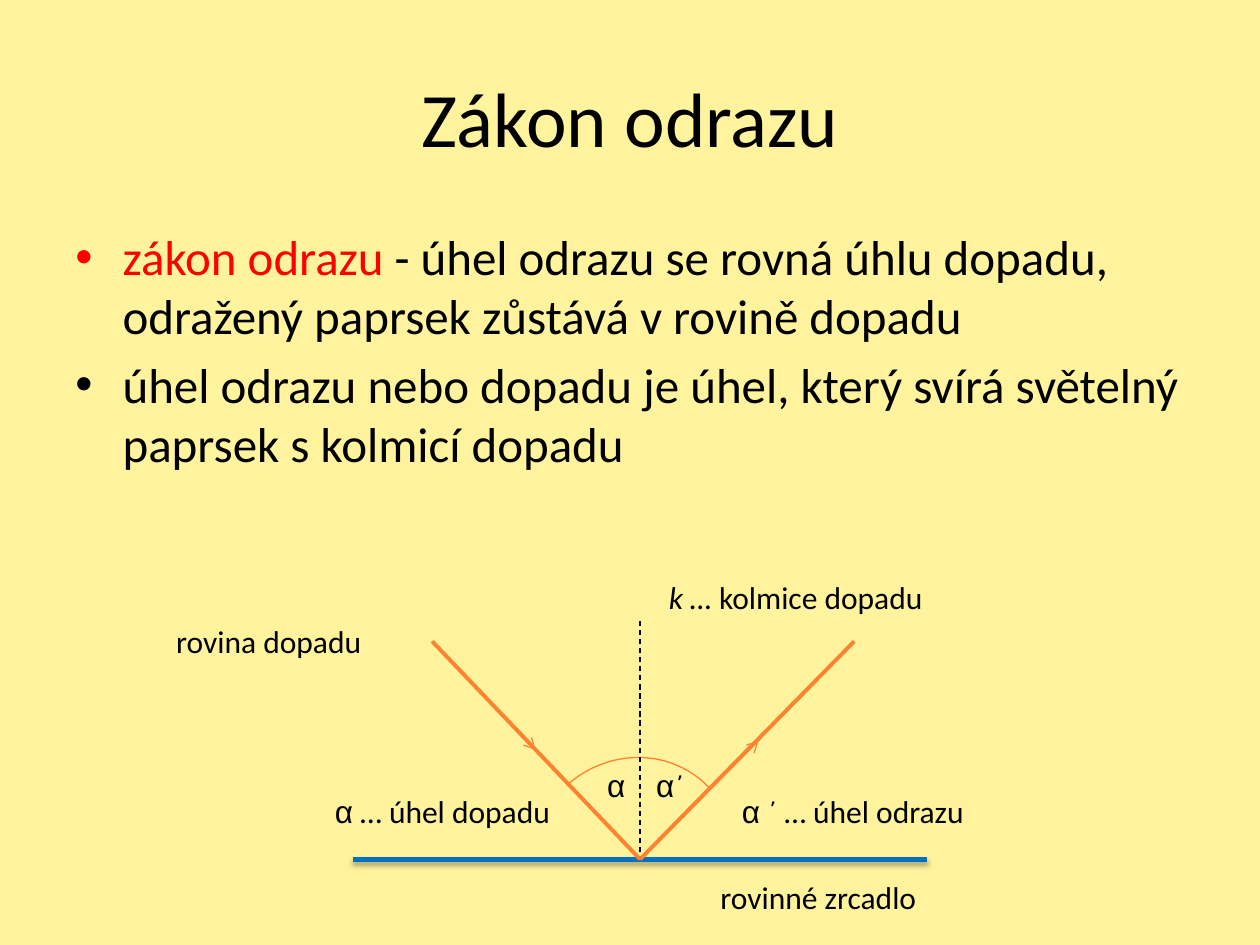
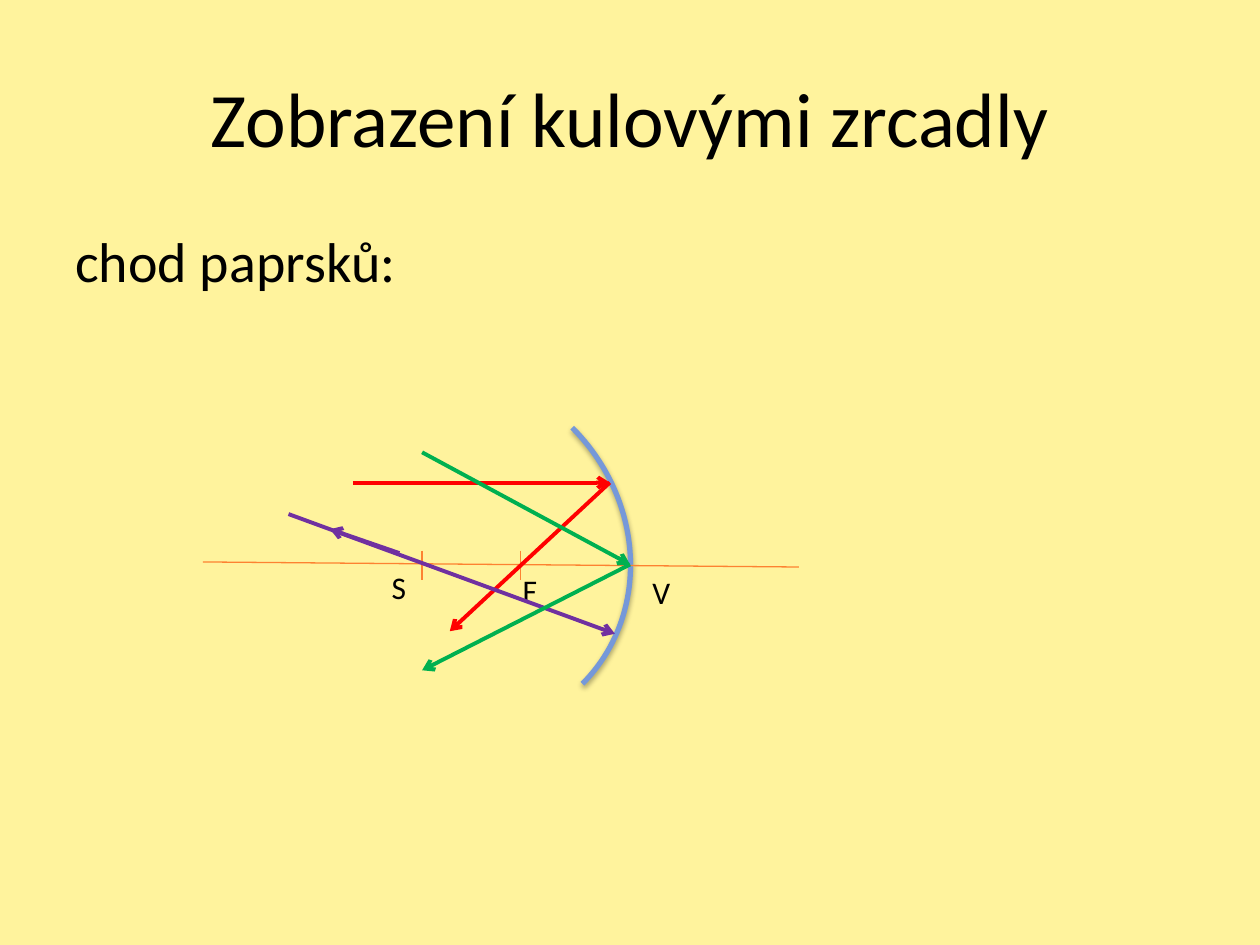
import dataclasses

import lxml.etree
import pptx
import pptx.dml.color
import pptx.enum.dml
import pptx.enum.shapes
import pptx.enum.text
import pptx.oxml.ns
import pptx.util


@dataclasses.dataclass(frozen=True)
class Theme:
    paper: str = "FFF39D"
    ink: str = "000000"
    orange: str = "FD8231"
    blue: str = "0070C0"
    pale_blue: str = "7598D9"
    red: str = "FF0000"
    violet: str = "7030A0"
    green: str = "00B050"
    font: str = "Calibri"
    greek_font: str = "Arial"
    title_size: int = 44
    lead_size: int = 32
    body_size: int = 28
    label_size: int = 18
    thin: float = 0.75
    ray: float = 2.25
    mirror: float = 3


theme = Theme()
qn = pptx.oxml.ns.qn
Pt = pptx.util.Pt
rgb = pptx.dml.color.RGBColor.from_string
STRAIGHT = pptx.enum.shapes.MSO_CONNECTOR.STRAIGHT
ARC = pptx.enum.shapes.MSO_SHAPE.ARC

deck = pptx.Presentation()
deck.slide_width = pptx.util.Inches(10)
deck.slide_height = pptx.util.Inches(7.5)
COLUMN = deck.slide_width / 100
ROW = deck.slide_height / 75

TITLE_AREA = (5, 3, 90, 12.5)
BODY_AREA = (5, 17.5, 90, 49.5)
LABEL_HEIGHT = 4


def on_grid(*cells):
    """Turn alternating columns and rows into slide lengths."""
    return [round(cell * (ROW if index % 2 else COLUMN)) for index, cell in enumerate(cells)]


def stroke(shape, color, width, arrow=False, dashed=False, shadow=False):
    shape.line.color.rgb = rgb(color)
    shape.line.width = Pt(width)
    if dashed:
        shape.line.dash_style = pptx.enum.dml.MSO_LINE.DASH
    properties = shape._element.spPr
    if arrow:
        lxml.etree.SubElement(properties.find(qn("a:ln")), qn("a:tailEnd"), type="arrow")
    effects = lxml.etree.SubElement(properties, qn("a:effectLst"))
    if shadow:
        outer = lxml.etree.SubElement(
            effects, qn("a:outerShdw"), blurRad=str(Pt(3.1)), dist=str(Pt(1.8)),
            dir="5400000", rotWithShape="0")
        tint = lxml.etree.SubElement(outer, qn("a:srgbClr"), val=theme.ink)
        lxml.etree.SubElement(tint, qn("a:alpha"), val="35000")


deck.slide_master.background.fill.solid()
deck.slide_master.background.fill.fore_color.rgb = rgb(theme.paper)

# Each span is (words, font, colour, italic); plain strings take the defaults.
alpha = ("α", theme.greek_font, theme.ink, False)
slides = [
    {
        "title": "Zákon odrazu",
        "body": [
            [("zákon odrazu ", theme.font, theme.red, False),
             "- úhel odrazu se rovná úhlu dopadu, odražený paprsek zůstává v rovině dopadu"],
            ["úhel odrazu nebo dopadu je úhel, který svírá světelný paprsek s kolmicí dopadu"],
        ],
        "body_size": theme.body_size,
        "bullets": True,
        "arcs": [((42, 60.3, 16.5, 15.7), 317.7, theme.orange, theme.thin, False)],
        "labels": [
            (52.1, 45.4, 22.4, [("k … ", theme.font, theme.ink, True), "kolmice dopadu"]),
            (13, 48.9, 16.9, ["rovina dopadu"]),
            (56.2, 69.2, 17.7, ["rovinné zrcadlo"]),
            (51.1, 60.3, 4.4, [alpha, "´"]),
            (47.2, 60.3, 3.6, [alpha]),
            (25.6, 62.4, 19.7, [alpha, " … úhel dopadu"]),
            (57.9, 62.4, 19.9, [alpha, " ´ … úhel odrazu"]),
        ],
        "lines": [
            ((28, 68.2, 73.6, 68.2), theme.blue, theme.mirror, {"shadow": True}),
            ((50.8, 49.3, 50.8, 68.2), theme.ink, theme.thin, {"dashed": True}),
            ((34.3, 50.9, 50.8, 68.2), theme.orange, theme.ray, {}),
            ((34.3, 50.9, 42.5, 59.5), theme.orange, theme.thin, {"arrow": True}),
            ((50.8, 68.2, 67.8, 50.9), theme.orange, theme.ray, {}),
            ((50.8, 68.2, 60.2, 58.8), theme.orange, theme.thin, {"arrow": True}),
        ],
    },
    {
        "title": "Zobrazení kulovými zrcadly",
        "body": [["chod paprsků:"]],
        "body_size": theme.lead_size,
        "bullets": False,
        "arcs": [((20.7, 29.9, 29.9, 27.6), 45, theme.pale_blue, theme.mirror, True)],
        "labels": [
            (30.1, 44.6, 3.2, ["S"]),
            (40.5, 44.8, 3.1, ["F"]),
            (50.8, 45, 3.5, ["V"]),
        ],
        "lines": [
            ((16.1, 44.6, 63.4, 45), theme.orange, theme.thin, {}),
            ((41.3, 43.7, 41.3, 46), theme.orange, theme.thin, {}),
            ((33.5, 43.7, 33.5, 46), theme.orange, theme.thin, {}),
            ((28, 38.3, 48.4, 38.3), theme.red, theme.ray, {"arrow": True}),
            ((48.4, 38.3, 35.7, 50.1), theme.red, theme.ray, {"arrow": True}),
            ((22.9, 40.8, 48.8, 50.3), theme.violet, theme.ray, {"arrow": True}),
            ((31.7, 43.9, 26.2, 42), theme.violet, theme.ray, {"arrow": True}),
            ((33.5, 35.9, 50, 44.8), theme.green, theme.ray, {"arrow": True}),
            ((50, 44.8, 33.5, 53.2), theme.green, theme.ray, {"arrow": True}),
        ],
    },
]

for content in slides:
    page = deck.slides.add_slide(deck.slide_layouts[6])

    texts = [("title", TITLE_AREA, [[content["title"]]], theme.title_size),
             ("body", BODY_AREA, content["body"], content["body_size"])]
    texts += [("label", (left, top, width, LABEL_HEIGHT), [spans], theme.label_size)
              for left, top, width, spans in content["labels"]]

    for role, area, paragraphs, size in texts:
        box = page.shapes.add_textbox(*on_grid(*area))
        frame = box.text_frame
        frame.word_wrap = role != "label"
        if role == "label":
            frame.auto_size = pptx.enum.text.MSO_AUTO_SIZE.SHAPE_TO_FIT_TEXT
        if role == "title":
            frame.vertical_anchor = pptx.enum.text.MSO_ANCHOR.MIDDLE
        for index, spans in enumerate(paragraphs):
            para = frame.add_paragraph() if index else frame.paragraphs[0]
            if role == "title":
                para.alignment = pptx.enum.text.PP_ALIGN.CENTER
            if role == "body":
                para.space_before = Pt(size * 0.2)
            if role == "body" and content["bullets"]:
                settings = para._p.get_or_add_pPr()
                indent = on_grid(3.75)[0]
                settings.set("marL", str(indent))
                settings.set("indent", str(-indent))
                lxml.etree.SubElement(settings, qn("a:buFont"), typeface="Arial")
                lxml.etree.SubElement(settings, qn("a:buChar"), char="•")
            for item in spans:
                if isinstance(item, str):
                    item = (item, theme.font, theme.ink, False)
                words, font, color, italic = item
                span = para.add_run()
                span.text = words
                span.font.name = font
                span.font.size = Pt(size)
                span.font.color.rgb = rgb(color)
                span.font.italic = italic

    for area, turn, color, width, shadow in content["arcs"]:
        arc = page.shapes.add_shape(ARC, *on_grid(*area))
        arc.rotation = turn
        arc.fill.background()
        stroke(arc, color, width, shadow=shadow)

    for ends, color, width, options in content["lines"]:
        line = page.shapes.add_connector(STRAIGHT, *on_grid(*ends))
        stroke(line, color, width, **options)

deck.save("out.pptx")
